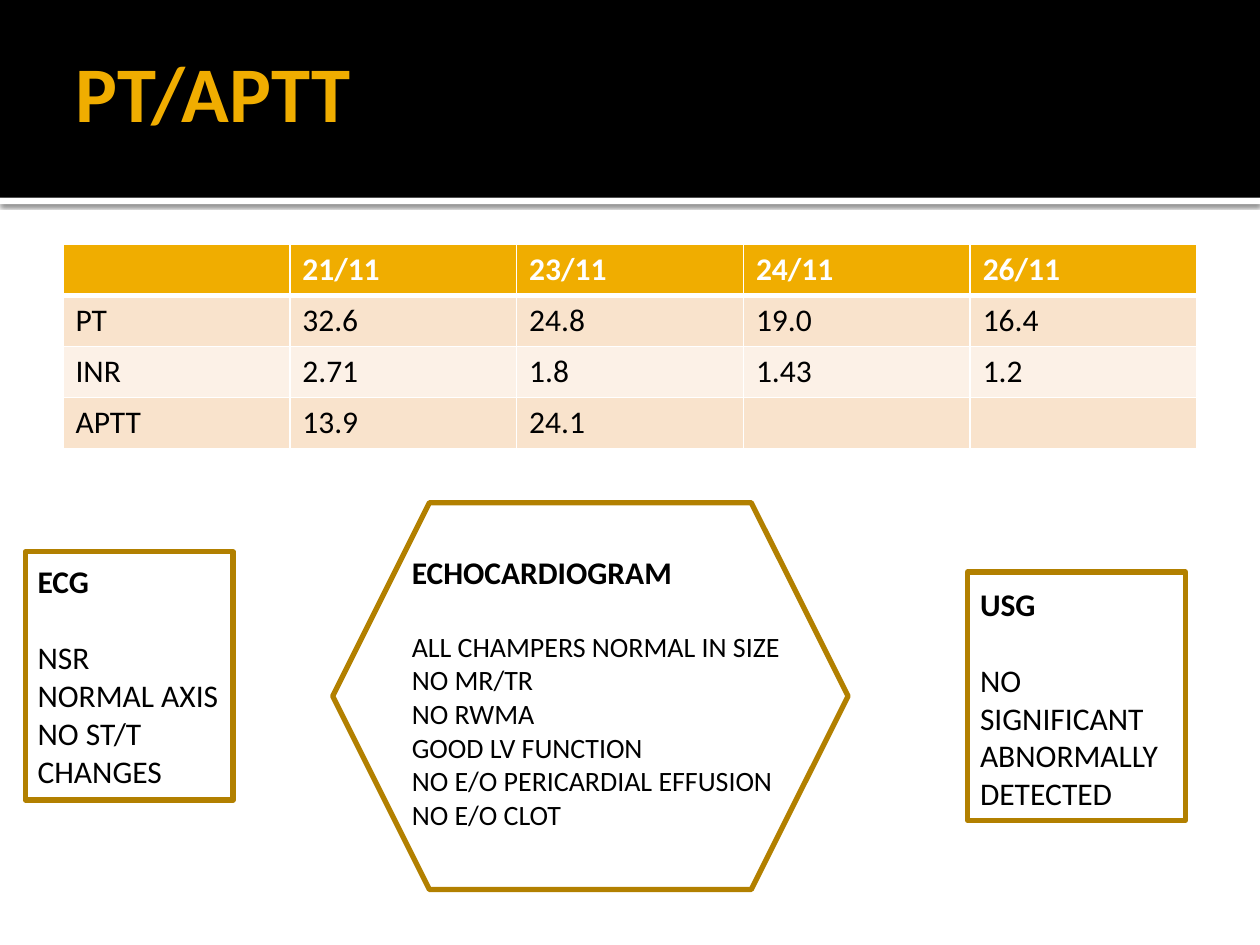
from dataclasses import dataclass

from lxml.etree import SubElement
from pptx import Presentation
from pptx.dml.color import RGBColor
from pptx.enum.shapes import MSO_SHAPE as Preset
from pptx.enum.text import MSO_ANCHOR as Anchor, MSO_AUTO_SIZE as AutoSize
from pptx.oxml.ns import qn
from pptx.util import Inches, Pt


@dataclass(frozen=True)
class Theme:
    font: str = "Calibri"
    black: str = "000000"
    white: str = "FFFFFF"
    gold: str = "F0AD00"
    outline: str = "B28000"
    bands: tuple = ("F9E3CC", "FCF1E7")
    title: int = 45
    body: int = 18
    small: int = 16
    heading_gap: int = 22
    outline_width: int = 3


class Page:
    COLUMNS, ROWS, UNIT = 100, 75, 0.1

    def __init__(self, deck, theme):
        self.theme = theme
        deck.slide_width, deck.slide_height = self.place(self.COLUMNS, self.ROWS)
        self.slide = deck.slides.add_slide(deck.slide_layouts[6])

    def place(self, *lengths):
        return [Inches(length * self.UNIT) for length in lengths]

    def style(self, para, size, color, bold=False):
        for span in para.runs:
            span.font.name = self.theme.font
            span.font.size = Pt(size)
            span.font.bold = bold
            span.font.color.rgb = RGBColor.from_string(color)

    def shape(self, preset, area, fill=None, line=None):
        shape = self.slide.shapes.add_shape(preset, *self.place(*area))
        shape.shadow.inherit = False
        if fill:
            shape.fill.solid()
            shape.fill.fore_color.rgb = RGBColor.from_string(fill)
        else:
            shape.fill.background()
        if line:
            shape.line.color.rgb = RGBColor.from_string(line)
            shape.line.width = Pt(self.theme.outline_width)
        else:
            shape.line.fill.background()
        return shape

    def shadow(self, shape, blur, distance, opacity):
        effects = shape.element.spPr.find(qn("a:effectLst"))
        outer = SubElement(effects, qn("a:outerShdw"), blurRad=str(Pt(blur)),
                           dist=str(Pt(distance)), dir="5400000", rotWithShape="0")
        color = SubElement(outer, qn("a:srgbClr"), val=self.theme.black)
        SubElement(color, qn("a:alpha"), val=str(opacity * 1000))

    def title(self, text, area):
        frame = self.slide.shapes.add_textbox(*self.place(*area)).text_frame
        frame.word_wrap = True
        frame.vertical_anchor = Anchor.MIDDLE
        frame.margin_right = Inches(0.05)
        frame.text = text
        self.style(frame.paragraphs[0], self.theme.title, self.theme.gold, True)

    def note(self, heading, lines, area, size):
        frame = self.slide.shapes.add_textbox(*self.place(*area)).text_frame
        frame.word_wrap = False
        frame.auto_size = AutoSize.SHAPE_TO_FIT_TEXT
        frame.text = "\n".join([heading, *lines])
        first, *rest = frame.paragraphs
        first.space_after = Pt(self.theme.heading_gap)
        self.style(first, self.theme.body, self.theme.black, True)
        for para in rest:
            self.style(para, size, self.theme.black)

    def border(self, cell, side, width):
        line = SubElement(cell._tc.get_or_add_tcPr(), qn(f"a:ln{side}"), w=str(Pt(width)))
        fill = SubElement(line, qn("a:solidFill"))
        SubElement(fill, qn("a:srgbClr"), val=self.theme.white)

    def table(self, rows, area):
        theme = self.theme
        table = self.slide.shapes.add_table(len(rows), len(rows[0]), *self.place(*area)).table
        for row, values in enumerate(rows):
            header = row == 0
            fill = theme.gold if header else theme.bands[(row - 1) % 2]
            for column, value in enumerate(values):
                cell = table.cell(row, column)
                for side in "LRTB":
                    thick = (header and side == "B") or (row == 1 and side == "T")
                    self.border(cell, side, 3 if thick else 1)
                cell.fill.solid()
                cell.fill.fore_color.rgb = RGBColor.from_string(fill)
                cell.text = value
                color = theme.white if header else theme.black
                self.style(cell.text_frame.paragraphs[0], theme.body, color, header)


def main():
    theme = Theme()
    deck = Presentation()
    page = Page(deck, theme)

    strip = page.shape(Preset.RECTANGLE, (0, 15.7, 100, 0.5), fill=theme.white)
    page.shadow(strip, blur=2.5, distance=0.8, opacity=60)
    page.shape(Preset.RECTANGLE, (0, 0, 100, 15.7), fill=theme.black)
    page.title("PT/APTT", (5, 3, 32.4, 8.5))

    page.table([
        ("", "21/11", "23/11", "24/11", "26/11"),
        ("PT", "32.6", "24.8", "19.0", "16.4"),
        ("INR", "2.71", "1.8", "1.43", "1.2"),
        ("APTT", "13.9", "24.1", "", ""),
    ], (5, 19.4, 90, 16.2))

    for preset, area in (
        (Preset.HEXAGON, (26.4, 39.9, 40.9, 30.7)),
        (Preset.RECTANGLE, (2, 43.8, 16.5, 19.7)),
        (Preset.RECTANGLE, (76.8, 45.4, 17.3, 19.7)),
    ):
        page.shape(preset, area, line=theme.outline)

    page.note("ECG", ["NSR", "NORMAL AXIS", "NO ST/T", "CHANGES"],
              (2, 44.1, 16.5, 19.2), theme.body)
    page.note("ECHOCARDIOGRAM", [
        "ALL CHAMPERS NORMAL IN SIZE", "NO MR/TR", "NO RWMA", "GOOD LV FUNCTION",
        "NO E/O PERICARDIAL EFFUSION", "NO E/O CLOT",
    ], (31.7, 43.4, 31.6, 23.6), theme.small)
    page.note("USG", ["NO", "SIGNIFICANT", "ABNORMALLY", "DETECTED"],
              (76.8, 45.9, 16.3, 19.2), theme.body)

    deck.save("out.pptx")


if __name__ == "__main__":
    main()
